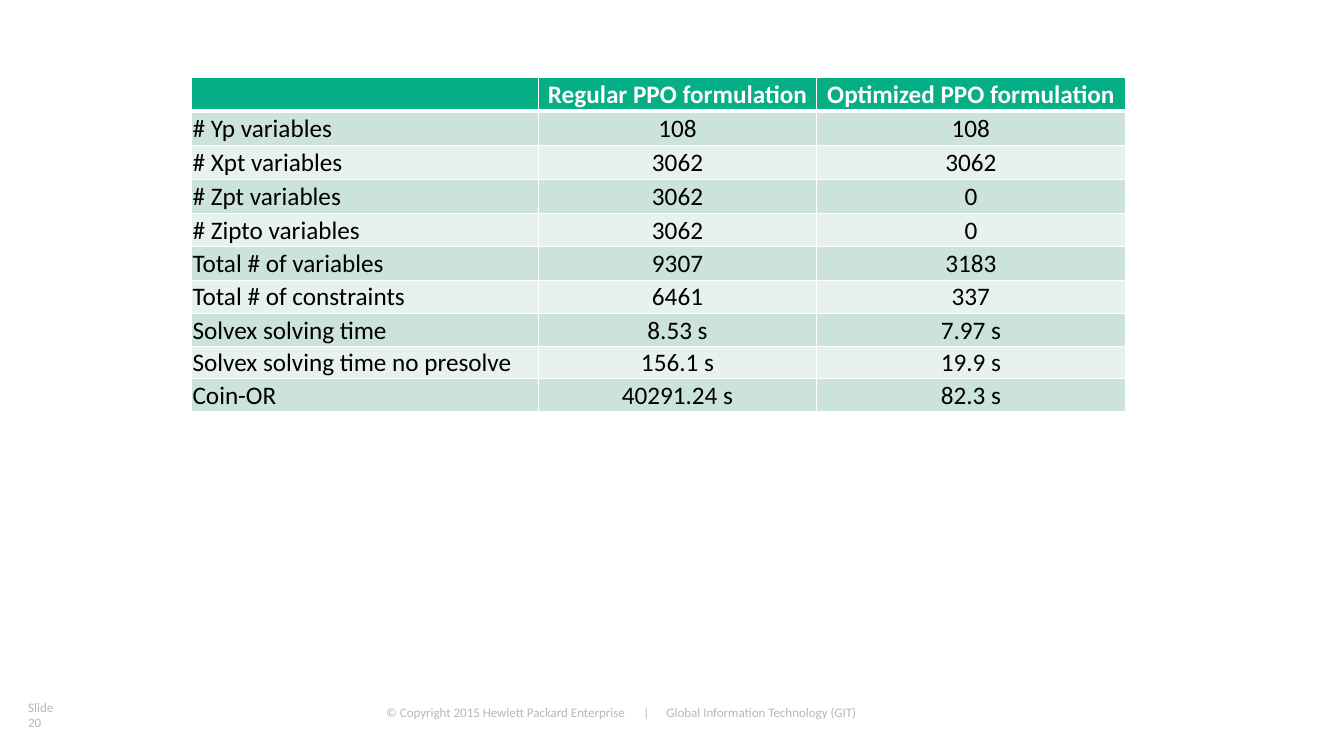
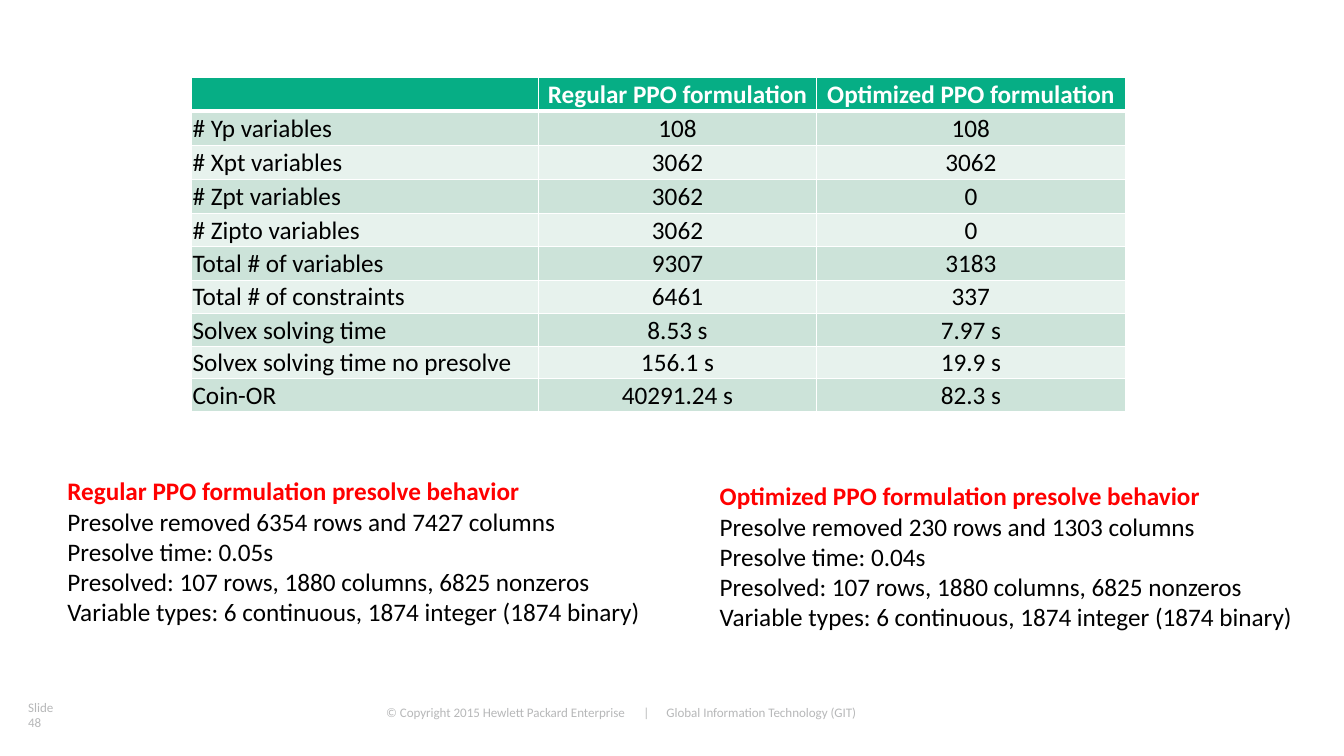
from lxml.etree import SubElement
from pptx import Presentation
from pptx.dml.color import RGBColor
from pptx.enum.text import MSO_ANCHOR as ANCHOR, MSO_AUTO_SIZE as AUTO, PP_ALIGN as ALIGN
from pptx.oxml.ns import qn
from pptx.util import Inches, Pt

FONT = "Calibri"
GREEN, DARK_BAND, LIGHT_BAND = "06AE85", "CCE3D9", "E7F2ED"
WHITE, BLACK, RED, GREY = "FFFFFF", "000000", "FF0000", "B7B8B9"

COPYRIGHT = "© Copyright 2015 Hewlett Packard Enterprise\t|\tGlobal Information Technology (GIT)"
COPYRIGHT_TABS = (2.55, 2.78)

COLUMN_WIDTHS = (3.44, 2.76, 3.06)
ROW_HEIGHTS = [0.33] + [0.34] * 3 + [0.33] * 4 + [0.32] * 2
COMPARISON = [
    ("", "Regular PPO formulation", "Optimized PPO formulation"),
    ("# Yp variables", "108", "108"),
    ("# Xpt variables", "3062", "3062"),
    ("# Zpt variables", "3062", "0"),
    ("# Zipto variables", "3062", "0"),
    ("Total # of variables", "9307", "3183"),
    ("Total # of constraints", "6461", "337"),
    ("Solvex solving time", "8.53 s", "7.97 s"),
    ("Solvex solving time no presolve", "156.1 s", "19.9 s"),
    ("Coin-OR", "40291.24 s", "82.3 s"),
]
PRESOLVED = [
    "Presolved: 107 rows, 1880 columns, 6825 nonzeros",
    "Variable types: 6 continuous, 1874 integer (1874 binary)",
]
OPTIMIZED_LOG = [
    "Presolve removed 230 rows and 1303 columns",
    "Presolve time: 0.04s",
] + PRESOLVED
REGULAR_LOG = [
    "Presolve removed 6354 rows and 7427 columns",
    "Presolve time: 0.05s",
] + PRESOLVED


def rgb(value):
    """Turn a hex string into a colour."""
    return RGBColor.from_string(value)


def style(p, size, color, bold=False, align=ALIGN.LEFT):
    """Set the font and alignment of a paragraph."""
    p.alignment = align
    p.font.name = FONT
    p.font.size = Pt(size)
    p.font.bold = bold
    p.font.color.rgb = rgb(color)


def set_margins(target, left, top, right, bottom):
    """Set the inner margins of a text frame or cell."""
    target.margin_left, target.margin_top = Inches(left), Inches(top)
    target.margin_right, target.margin_bottom = Inches(right), Inches(bottom)


def add_text(slide, left, top, width, height):
    """Add a wrapping text box and return its text frame."""
    box = slide.shapes.add_textbox(Inches(left), Inches(top), Inches(width), Inches(height))
    tf = box.text_frame
    tf.word_wrap = True
    return tf


def add_tabs(p, positions):
    """Add left tab stops to a paragraph."""
    tabs = SubElement(p._p.get_or_add_pPr(), qn("a:tabLst"))
    for position in positions:
        SubElement(tabs, qn("a:tab"), pos=str(Inches(position)), algn="l")


def add_footer(slide, number):
    """Add the copyright line and the slide number."""
    tf = add_text(slide, 2.68, 6.94, 6.98, 0.33)
    tf.margin_left = Inches(1.15)
    p = tf.paragraphs[0]
    p.text = COPYRIGHT
    add_tabs(p, COPYRIGHT_TABS)
    style(p, 9.3, GREY)

    tf = add_text(slide, 0.28, 6.98, 0.47, 0.22)
    tf.word_wrap = False
    tf.vertical_anchor = ANCHOR.MIDDLE
    set_margins(tf, 0, 0.07, 0.13, 0.07)
    p = tf.paragraphs[0]
    p.text = f"Slide {number}"
    style(p, 9.3, GREY)


def add_borders(cell, **widths):
    """Draw white borders on a cell, 1 point wide unless given."""
    tcPr = cell._tc.get_or_add_tcPr()
    for side in "LRTB":
        ln = SubElement(tcPr, qn(f"a:ln{side}"), w=str(Pt(widths.get(side, 1))))
        SubElement(SubElement(ln, qn("a:solidFill")), qn("a:srgbClr"), val=WHITE)


def format_cell(cell, row, column):
    """Style a cell by its place in the table."""
    header = row == 0
    add_borders(cell, B=3 if header else 1, T=3 if row == 1 else 1)
    cell.fill.solid()
    cell.fill.fore_color.rgb = rgb(GREEN if header else DARK_BAND if row % 2 else LIGHT_BAND)
    cell.vertical_anchor = ANCHOR.MIDDLE
    set_margins(cell, 0.01, 0.01, 0.01, 0)
    style(cell.text_frame.paragraphs[0], 18, WHITE if header else BLACK, header,
          ALIGN.CENTER if column else ALIGN.LEFT)


def add_comparison(slide):
    """Add the table that compares both formulations."""
    frame = slide.shapes.add_table(
        len(COMPARISON), len(COLUMN_WIDTHS), Inches(1.9), Inches(0.77),
        Inches(sum(COLUMN_WIDTHS)), Inches(sum(ROW_HEIGHTS)))
    table = frame.table
    for column, width in zip(table.columns, COLUMN_WIDTHS):
        column.width = Inches(width)
    for i, (height, values) in enumerate(zip(ROW_HEIGHTS, COMPARISON)):
        table.rows[i].height = Inches(height)
        for j, value in enumerate(values):
            cell = table.cell(i, j)
            cell.text = value
            format_cell(cell, i, j)


def add_log(slide, left, top, width, heading, lines):
    """Add presolve output under a red heading."""
    tf = add_text(slide, left, top, width, 1.62)
    tf.auto_size = AUTO.SHAPE_TO_FIT_TEXT
    tf.text = "\n".join([heading] + lines)
    for i, p in enumerate(tf.paragraphs):
        style(p, 18, BLACK if i else RED, bold=i == 0)


def add_comparison_slide(prs, number):
    """Add a slide with the footer and the comparison table."""
    slide = prs.slides.add_slide(prs.slide_layouts[6])
    add_footer(slide, number)
    add_comparison(slide)
    return slide


def main():
    """Build and save the presentation."""
    prs = Presentation()
    prs.slide_width, prs.slide_height = Inches(13.33), Inches(7.5)
    add_comparison_slide(prs, 20)
    slide = add_comparison_slide(prs, 48)
    add_log(slide, 7.04, 4.72, 6.06, "Optimized PPO formulation presolve behavior", OPTIMIZED_LOG)
    add_log(slide, 0.57, 4.67, 6.67, "Regular PPO formulation presolve behavior", REGULAR_LOG)
    prs.save("out.pptx")


if __name__ == "__main__":
    main()
